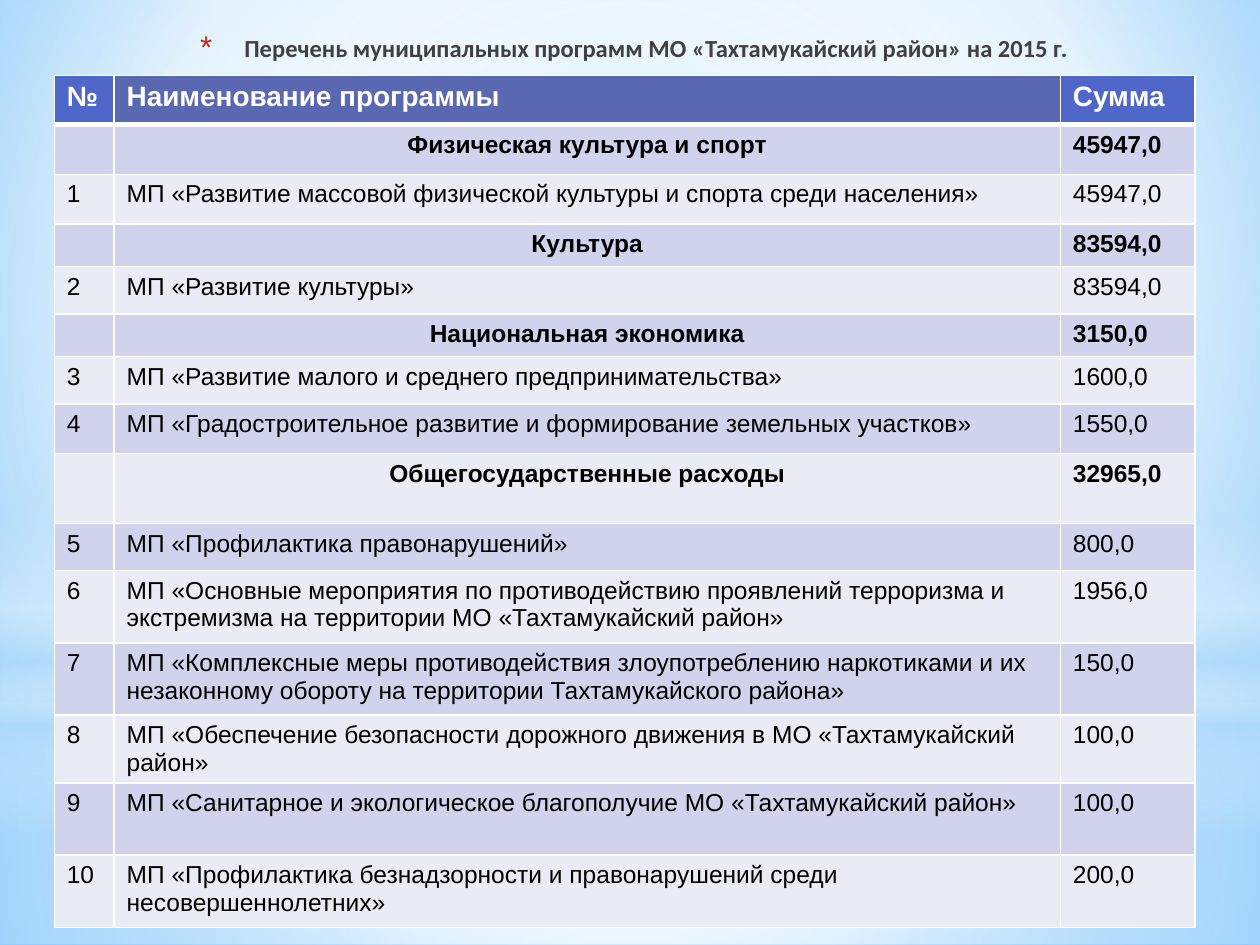
from lxml import etree
from pptx import Presentation
from pptx.dml.color import RGBColor
from pptx.enum.shapes import MSO_SHAPE as Shape
from pptx.enum.text import MSO_ANCHOR as Anchor, PP_ALIGN as Align
from pptx.oxml.ns import qn
from pptx.util import Pt

WHITE = RGBColor(0xFF, 0xFF, 0xFF)
BLACK = RGBColor(0, 0, 0)
DARK_GREY = RGBColor(0x40, 0x40, 0x40)
RED = RGBColor(0xC3, 0x26, 0x0C)
SKY = RGBColor(0x9E, 0xD5, 0xFF)
DEEP_SKY = RGBColor(0x5B, 0xB9, 0xFF)
PALE_BLUE = RGBColor(0xB4, 0xDC, 0xFA)
HEADER_BLUE = RGBColor(0x4E, 0x67, 0xC8)
HEADER_SLATE = RGBColor(0x59, 0x68, 0xB0)
BAND_DARK = RGBColor(0xD0, 0xD3, 0xEB)
BAND_LIGHT = RGBColor(0xE9, 0xEB, 0xF5)
CENTRE = (50, 50, 50, 50)


def set_gradient(properties, stops, focus=None):
    gradient = etree.Element(qn("a:gradFill"), rotWithShape="1")
    stop_list = etree.SubElement(gradient, qn("a:gsLst"))
    for position, color, opacity in stops:
        stop = etree.SubElement(stop_list, qn("a:gs"), pos=str(position * 1000))
        rgb = etree.SubElement(stop, qn("a:srgbClr"), val=str(color))
        etree.SubElement(rgb, qn("a:alpha"), val=str(opacity * 1000))
    if focus:
        route = etree.SubElement(gradient, qn("a:path"), {"path": "circle"})
        sides = {side: str(value * 1000) for side, value in zip("ltrb", focus)}
        etree.SubElement(route, qn("a:fillToRect"), sides)
    else:
        etree.SubElement(gradient, qn("a:lin"), ang="5400000", scaled="0")
    solid = properties.find(qn("a:solidFill"))
    properties.replace(solid, gradient)


def set_borders(cell, bottom_width):
    properties = cell._tc.get_or_add_tcPr()
    widths = (("lnL", 1), ("lnR", 1), ("lnT", 1), ("lnB", bottom_width))
    for index, (side, width) in enumerate(widths):
        line = etree.Element(qn("a:" + side), w=str(Pt(width)))
        fill = etree.SubElement(line, qn("a:solidFill"))
        etree.SubElement(fill, qn("a:srgbClr"), val=str(WHITE))
        properties.insert(index, line)


presentation = Presentation()
presentation.slide_width = Pt(720)
presentation.slide_height = Pt(540)
slide = presentation.slides.add_slide(presentation.slide_layouts[5])

slide.background.fill.solid()
background = slide._element.find(".//" + qn("p:bgPr"))
set_gradient(background, [(0, SKY, 100), (60, WHITE, 100), (100, DEEP_SKY, 100)],
             (20, 10, 20, 60))

glows = [
    (Shape.RECTANGLE, 402, 138, CENTRE,
     [(0, WHITE, 91), (37, WHITE, 76), (100, PALE_BLUE, 79)]),
    (Shape.RECTANGLE, 0, 402, CENTRE,
     [(0, WHITE, 89), (48, WHITE, 62), (100, PALE_BLUE, 79)]),
    (Shape.RECTANGLE, 296.6, 180, None,
     [(0, WHITE, 0), (29, WHITE, 30), (45, PALE_BLUE, 40),
      (55, WHITE, 26), (65, PALE_BLUE, 60), (100, WHITE, 0)]),
    (Shape.OVAL, 126, 402, CENTRE, [(0, WHITE, 100), (56, WHITE, 0)]),
]
for kind, top, height, focus, stops in glows:
    shape = slide.shapes.add_shape(kind, 0, Pt(top), Pt(720), Pt(height))
    shape.shadow.inherit = False
    shape.line.fill.background()
    shape.fill.solid()
    set_gradient(shape._element.spPr, stops, focus)

title = slide.shapes.title
slide.shapes._spTree.append(title._element)
title.left, title.top, title.width, title.height = Pt(48), Pt(15), Pt(629), Pt(34.5)
title.text_frame.text = "Перечень муниципальных программ МО «Тахтамукайский район» на 2015 г."
title.text_frame.vertical_anchor = Anchor.TOP
paragraph = title.text_frame.paragraphs[0]
paragraph.alignment = Align.CENTER
font = paragraph.runs[0].font
font.name, font.size, font.bold = "Calibri", Pt(14), True
font.color.rgb = DARK_GREY
properties = paragraph._p.get_or_add_pPr()
properties.set("marL", str(Pt(25.2)))
properties.set("indent", str(Pt(-25.2)))
bullet_color = etree.SubElement(properties, qn("a:buClr"))
etree.SubElement(bullet_color, qn("a:srgbClr"), val=str(RED))
etree.SubElement(properties, qn("a:buSzPct"), val="128000")
etree.SubElement(properties, qn("a:buFont"), typeface="Arial")
etree.SubElement(properties, qn("a:buChar"), char="*")

rows = [
    (28.3, "№", "Наименование программы", "Сумма"),
    (28.3, "", "Физическая культура и спорт", "45947,0"),
    (28.3, "1", "МП «Развитие массовой физической культуры и спорта среди населения»", "45947,0"),
    (24.5, "", "Культура", "83594,0"),
    (27, "2", "МП «Развитие культуры»", "83594,0"),
    (24.5, "", "Национальная экономика", "3150,0"),
    (27, "3", "МП «Развитие малого и среднего предпринимательства»", "1600,0"),
    (28.3, "4", "МП «Градостроительное развитие и формирование земельных участков»", "1550,0"),
    (40, "", "Общегосударственные расходы", "32965,0"),
    (27, "5", "МП «Профилактика правонарушений»", "800,0"),
    (41.3, "6", "МП «Основные мероприятия по противодействию проявлений терроризма и "
     "экстремизма на территории МО «Тахтамукайский район»", "1956,0"),
    (41.3, "7", "МП «Комплексные меры противодействия злоупотреблению наркотиками и их "
     "незаконному обороту на территории Тахтамукайского района»", "150,0"),
    (38.8, "8", "МП «Обеспечение безопасности дорожного движения в МО «Тахтамукайский район»",
     "100,0"),
    (41.3, "9", "МП «Санитарное и экологическое благополучие МО «Тахтамукайский район»", "100,0"),
    (41.3, "10", "МП «Профилактика безнадзорности и правонарушений среди несовершеннолетних»",
     "200,0"),
]
table_height = sum(row[0] for row in rows)
table = slide.shapes.add_table(len(rows), 3, Pt(31), Pt(43), Pt(652), Pt(table_height)).table
for column, width in zip(table.columns, (34.2, 540.7, 77.1)):
    column.width = Pt(width)

for row_index, (height, *texts) in enumerate(rows):
    table.rows[row_index].height = Pt(height)
    is_header = row_index == 0
    is_section = texts[0] == ""
    for column_index, text in enumerate(texts):
        cell = table.cell(row_index, column_index)
        cell.text_frame.text = text
        paragraph = cell.text_frame.paragraphs[0]
        if is_section and column_index == 1:
            paragraph.alignment = Align.CENTER
        if not text:
            etree.SubElement(paragraph._p, qn("a:endParaRPr"), sz="1400")
        for run in paragraph.runs:
            run.font.name = "Arial"
            run.font.size = Pt(16 if is_header else 14)
            run.font.bold = is_header or is_section
            run.font.color.rgb = WHITE if is_header else BLACK
        cell.fill.solid()
        if is_header:
            cell.fill.fore_color.rgb = HEADER_SLATE if column_index == 1 else HEADER_BLUE
        else:
            cell.fill.fore_color.rgb = BAND_DARK if row_index % 2 else BAND_LIGHT
        set_borders(cell, 3 if is_header else 1)

presentation.save("out.pptx")
